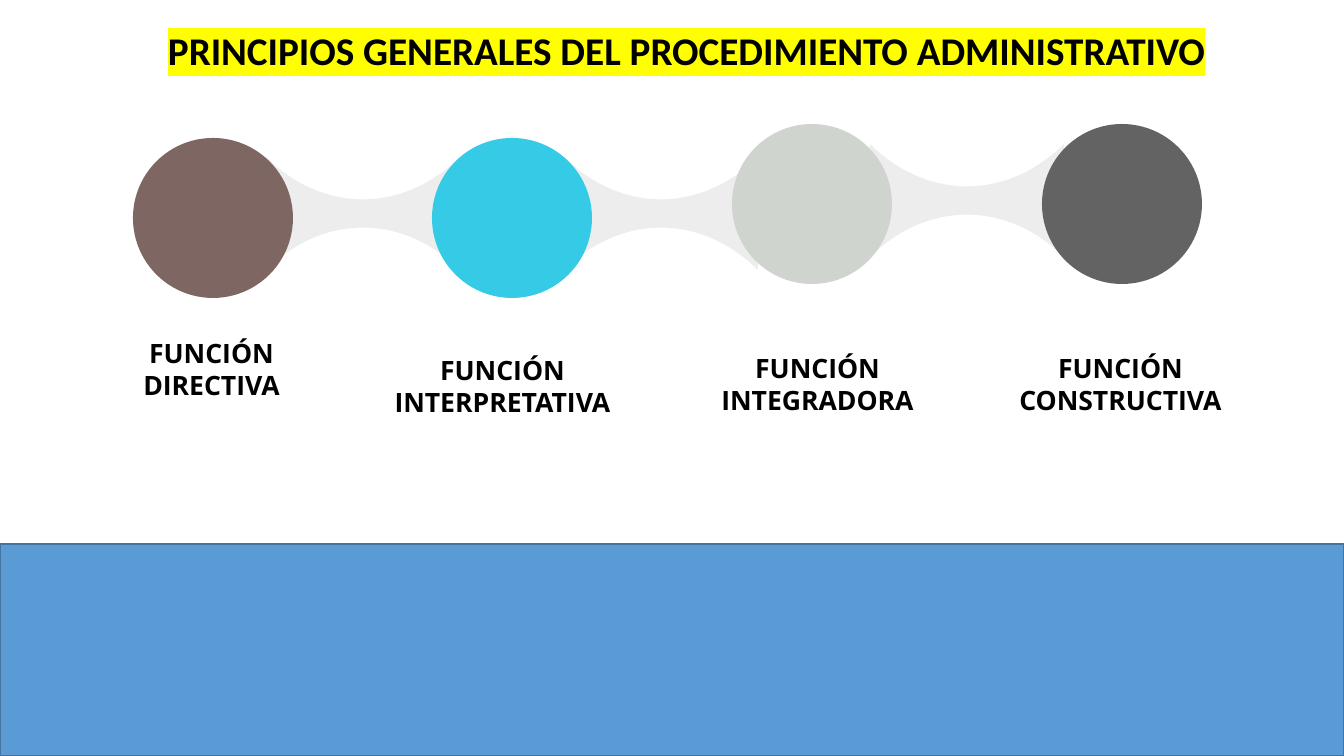
from pptx import Presentation, util as u
from pptx.dml.color import RGBColor
from pptx.enum import shapes, text
from pptx.oxml.ns import qn
from lxml import etree

TITLE = "PRINCIPIOS GENERALES DEL PROCEDIMIENTO ADMINISTRATIVO"
# words, disc left and top, disc colour, label left, top and width
FUNCTIONS = [
    (("FUNCIÓN", "DIRECTIVA"), (133, 138), "7E6762", (98, 332, 227)),
    (("FUNCIÓN", "INTERPRETATIVA"), (432, 138), "35CAE6", (380, 349, 245)),
    (("FUNCIÓN", "INTEGRADORA"), (732, 124), "D0D4CE", (704, 347, 227)),
    (("FUNCIÓN", "CONSTRUCTIVA"), (1042, 124), "636363", (1007, 347, 227)),
]
LINKS = [(266, 157), (564, 157), (870, 144)]

THEME = {
    "link": "EDEDED", "band": "5B9BD5", "band_line": "43739E",
    "ink": "000000", "highlight": "FFFF00",
    "title": ("Calibri", 28), "label": ("Open Sans", 19),
}
PX = 914400 / 100.8
SLIDE_W, SLIDE_H = 1344, 756
DISC = 160
LINK_W, LINK_H = 194, 113
LINK_BEND = 57
LABEL_H = 332
BAND_TOP = 544


def px(*lengths):
    return [round(length * PX) for length in lengths]


def paint(shape, fill, line=None):
    shape.shadow.inherit = False
    shape.fill.solid()
    shape.fill.fore_color.rgb = RGBColor.from_string(fill)
    if line:
        shape.line.color.rgb = RGBColor.from_string(line)
        shape.line.width = u.Pt(1)
    else:
        shape.line.fill.background()


def bend(edge, *controls):
    """Turn a straight outline segment into a cubic curve."""
    edge.tag = qn("a:cubicBezTo")
    for place, control in enumerate(controls):
        x, y = px(*control)
        point = etree.Element(qn("a:pt"), x=str(x), y=str(y))
        edge.insert(place, point)


def add_link(slide, left, top):
    """Draw a band whose upper and lower edges bend inwards."""
    right, bottom = left + LINK_W, top + LINK_H
    outline = slide.shapes.build_freeform(*px(left, top))
    corners = [(right, top), (right, bottom), (left, bottom)]
    outline.add_line_segments([px(*corner) for corner in corners], close=True)
    link = outline.convert_to_shape()
    upper, _, lower = list(link._element.iter(qn("a:lnTo")))[:3]
    near, far = (LINK_BEND, LINK_H / 2), (LINK_W - LINK_BEND, LINK_H / 2)
    bend(upper, near, far)
    bend(lower, far, near)
    paint(link, THEME["link"])


def add_text(slide, box, lines, style):
    frame = slide.shapes.add_textbox(*px(*box)).text_frame
    frame.word_wrap = True
    frame.text = "\n".join(lines)
    for paragraph in frame.paragraphs:
        paragraph.alignment = text.PP_ALIGN.CENTER
        font = paragraph.font
        font.name, size = THEME[style]
        font.size = u.Pt(size)
        font.bold = True
        font.color.rgb = RGBColor.from_string(THEME["ink"])
    return frame


def highlight(run):
    mark = etree.SubElement(run.font._element, qn("a:highlight"))
    etree.SubElement(mark, qn("a:srgbClr"), val=THEME["highlight"])


def main():
    deck = Presentation()
    deck.slide_width, deck.slide_height = px(SLIDE_W, SLIDE_H)
    slide = deck.slides.add_slide(deck.slide_layouts[6])

    for left, top in LINKS:
        add_link(slide, left, top)
    for words, disc_at, colour, (left, top, width) in FUNCTIONS:
        disc = slide.shapes.add_shape(
            shapes.MSO_SHAPE.OVAL, *px(*disc_at, DISC, DISC))
        paint(disc, colour)
        add_text(slide, (left, top, width, LABEL_H), words, "label")

    title = add_text(slide, (90, 21, 1193, 57), [TITLE], "title")
    highlight(title.paragraphs[0].runs[0])

    band = slide.shapes.add_shape(
        shapes.MSO_SHAPE.RECTANGLE, *px(0, BAND_TOP, SLIDE_W, SLIDE_H - BAND_TOP))
    paint(band, THEME["band"], THEME["band_line"])
    deck.save("out.pptx")


if __name__ == "__main__":
    main()
